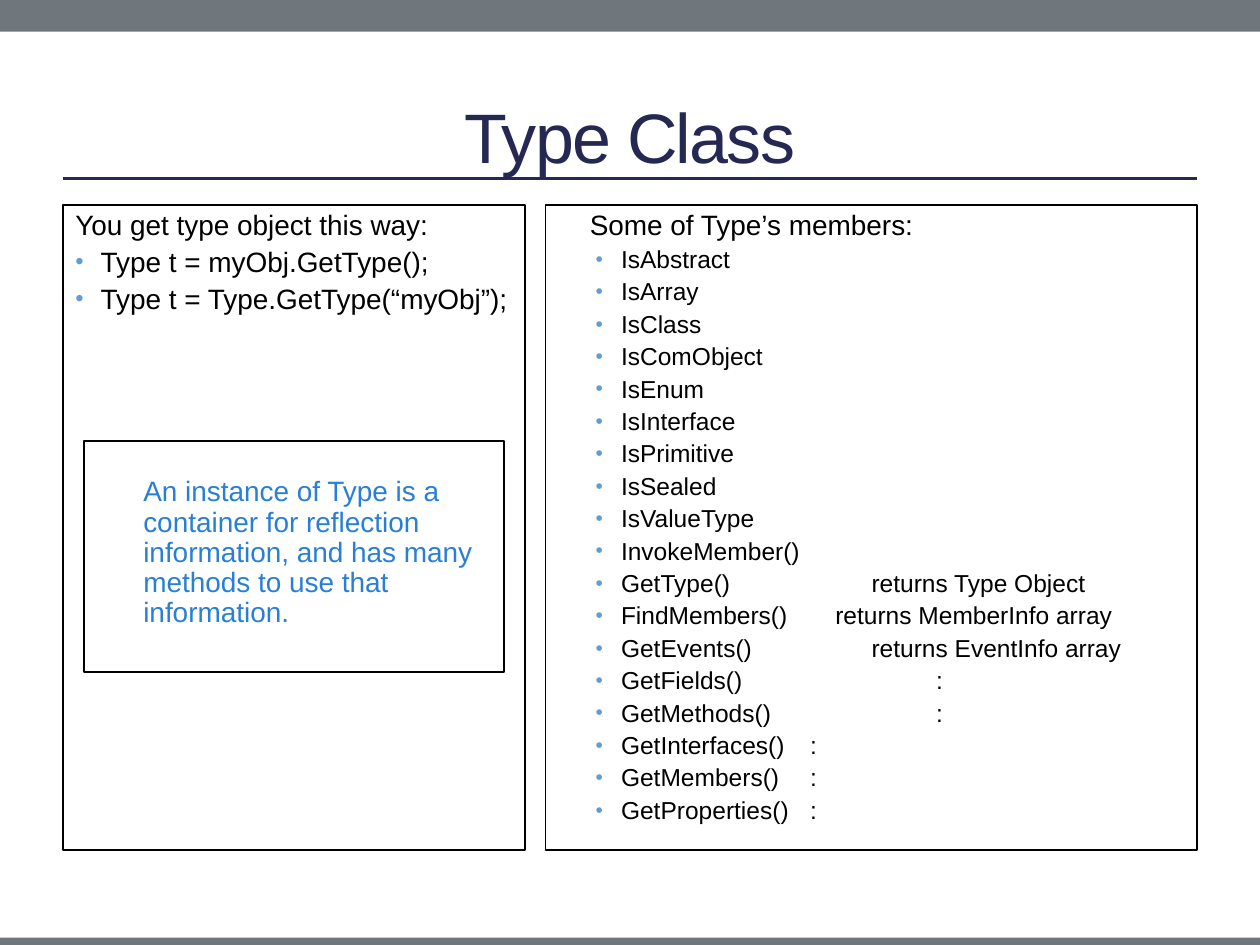
"""Build the "Type Class" slide with two bordered panels and a callout."""

from lxml.etree import SubElement
from pptx import Presentation
from pptx.dml.color import RGBColor
from pptx.enum.shapes import MSO_CONNECTOR, MSO_SHAPE
from pptx.enum.text import MSO_ANCHOR, PP_ALIGN
from pptx.oxml.ns import qn
from pptx.util import Cm, Pt

COLORS = {
    "bar": "6F777D",
    "navy": "242852",
    "black": "000000",
    "bullet": "629DD1",
    "callout": "297FD5",
}

TITLE = "Type Class"
WAYS_HEADING = "You get type object this way:"
WAYS = ["Type t = myObj.GetType();", "Type t = Type.GetType(“myObj”);"]
MEMBERS_HEADING = "Some of Type’s members:"
MEMBERS = [
    ("IsAbstract",),
    ("IsArray",),
    ("IsClass",),
    ("IsComObject",),
    ("IsEnum",),
    ("IsInterface",),
    ("IsPrimitive",),
    ("IsSealed",),
    ("IsValueType",),
    ("InvokeMember()",),
    ("GetType()", "returns Type Object", 6.32),
    ("FindMembers()", "returns MemberInfo array", 5.59),
    ("GetEvents()", "returns EventInfo array", 6.32),
    ("GetFields()", ":", 7.62),
    ("GetMethods()", ":", 7.62),
    ("GetInterfaces()", ":", 5.08),
    ("GetMembers()", ":", 5.08),
    ("GetProperties()", ":", 5.08),
]
CALLOUT = (
    "An instance of Type is a container for reflection information, "
    "and has many methods to use that information."
)

WIDTH, HEIGHT = 25.4, 19.05
MARGIN = 1.27
BARS = [(0, 0, WIDTH, 0.64), (0, 18.9, WIDTH, 0.15)]
RULE_TOP = 3.6
TITLE_BOX = (MARGIN, 1.37, WIDTH - 2 * MARGIN, 2.74)
PANEL_TOP, PANEL_HEIGHT = 4.13, 13.01
WAYS_WIDTH, PANEL_GAP = 9.32, 0.41
MEMBERS_LEFT = MARGIN + WAYS_WIDTH + PANEL_GAP
WAYS_BOX = (MARGIN, PANEL_TOP, WAYS_WIDTH, PANEL_HEIGHT)
MEMBERS_BOX = (MEMBERS_LEFT, PANEL_TOP, WIDTH - MARGIN - MEMBERS_LEFT, PANEL_HEIGHT)
CALLOUT_BOX = (1.69, 8.89, 8.47, 4.66)
HANGING = 0.51

FRAME_FORMAT = {
    "word_wrap": True,
    "vertical_anchor": MSO_ANCHOR.TOP,
    "margin_left": Cm(0.25),
    "margin_right": Cm(0.25),
    "margin_top": Cm(0.13),
    "margin_bottom": Cm(0.13),
}


def color(name):
    return RGBColor.from_string(COLORS[name])


def apply(target, values):
    for name, value in values.items():
        setattr(target, name, value)


def add_box(slide, box, fill=None, line=None, **frame):
    shape = slide.shapes.add_shape(MSO_SHAPE.RECTANGLE, *map(Cm, box))
    shape.shadow.inherit = False
    if fill:
        shape.fill.solid()
        shape.fill.fore_color.rgb = color(fill)
    else:
        shape.fill.background()
    if line:
        shape.line.color.rgb = color(line)
        shape.line.width = Pt(1)
    else:
        shape.line.fill.background()
    apply(shape.text_frame, {**FRAME_FORMAT, **frame})
    return shape.text_frame


def add_bullet(properties):
    bullet_color = SubElement(properties, qn("a:buClr"))
    SubElement(bullet_color, qn("a:srgbClr"), val=COLORS["bullet"])
    SubElement(properties, qn("a:buSzPct"), val="85000")
    SubElement(properties, qn("a:buFont"), typeface="Arial")
    SubElement(properties, qn("a:buChar"), char="•")


def write(frame, text, size=16, ink="black", left=0, bullet=False, tab=None):
    first = not frame.paragraphs[0].runs
    paragraph = frame.paragraphs[0] if first else frame.add_paragraph()
    paragraph_format = {
        "alignment": PP_ALIGN.LEFT,
        "line_spacing": 0.9,
        "space_before": Pt(0 if first else 0.24 * size),
    }
    apply(paragraph, paragraph_format)
    properties = paragraph._p.get_or_add_pPr()
    properties.set("marL", str(Cm(left)))
    properties.set("indent", str(Cm(-HANGING if bullet else 0)))
    if bullet:
        add_bullet(properties)
    if tab:
        tabs = SubElement(properties, qn("a:tabLst"))
        SubElement(tabs, qn("a:tab"), pos=str(Cm(tab)), algn="l")
    run = paragraph.add_run()
    run.text = text
    apply(run.font, {"name": "Arial", "size": Pt(size)})
    run.font.color.rgb = color(ink)
    return paragraph


def add_title(slide):
    frame = add_box(slide, TITLE_BOX, vertical_anchor=MSO_ANCHOR.MIDDLE)
    paragraph = write(frame, TITLE, size=40, ink="navy")
    apply(paragraph, {"alignment": PP_ALIGN.CENTER, "line_spacing": 1.0})
    paragraph.runs[0].font._element.set("spc", "-100")


def add_rule(slide):
    ends = (MARGIN, RULE_TOP, WIDTH - MARGIN, RULE_TOP)
    rule = slide.shapes.add_connector(MSO_CONNECTOR.STRAIGHT, *map(Cm, ends))
    rule.line.color.rgb = color("navy")
    rule.line.width = Pt(1.5)
    SubElement(rule._element.spPr, qn("a:effectLst"))


def main():
    presentation = Presentation()
    apply(presentation, {"slide_width": Cm(WIDTH), "slide_height": Cm(HEIGHT)})
    slide = presentation.slides.add_slide(presentation.slide_layouts[6])

    for bar in BARS:
        add_box(slide, bar, fill="bar")
    add_rule(slide)
    add_title(slide)

    ways = add_box(slide, WAYS_BOX, line="black")
    write(ways, WAYS_HEADING)
    for way in WAYS:
        write(ways, way, left=HANGING, bullet=True)

    members = add_box(slide, MEMBERS_BOX, line="black")
    write(members, MEMBERS_HEADING, left=0.64)
    for name, *result in MEMBERS:
        note, tab = result or (None, None)
        text = f"{name}\t{note}" if note else name
        write(members, text, size=14, left=1.27, bullet=True, tab=tab)

    callout = add_box(slide, CALLOUT_BOX, line="black", margin_top=Cm(0.74))
    write(callout, CALLOUT, ink="callout", left=0.95)

    presentation.save("out.pptx")


if __name__ == "__main__":
    main()
